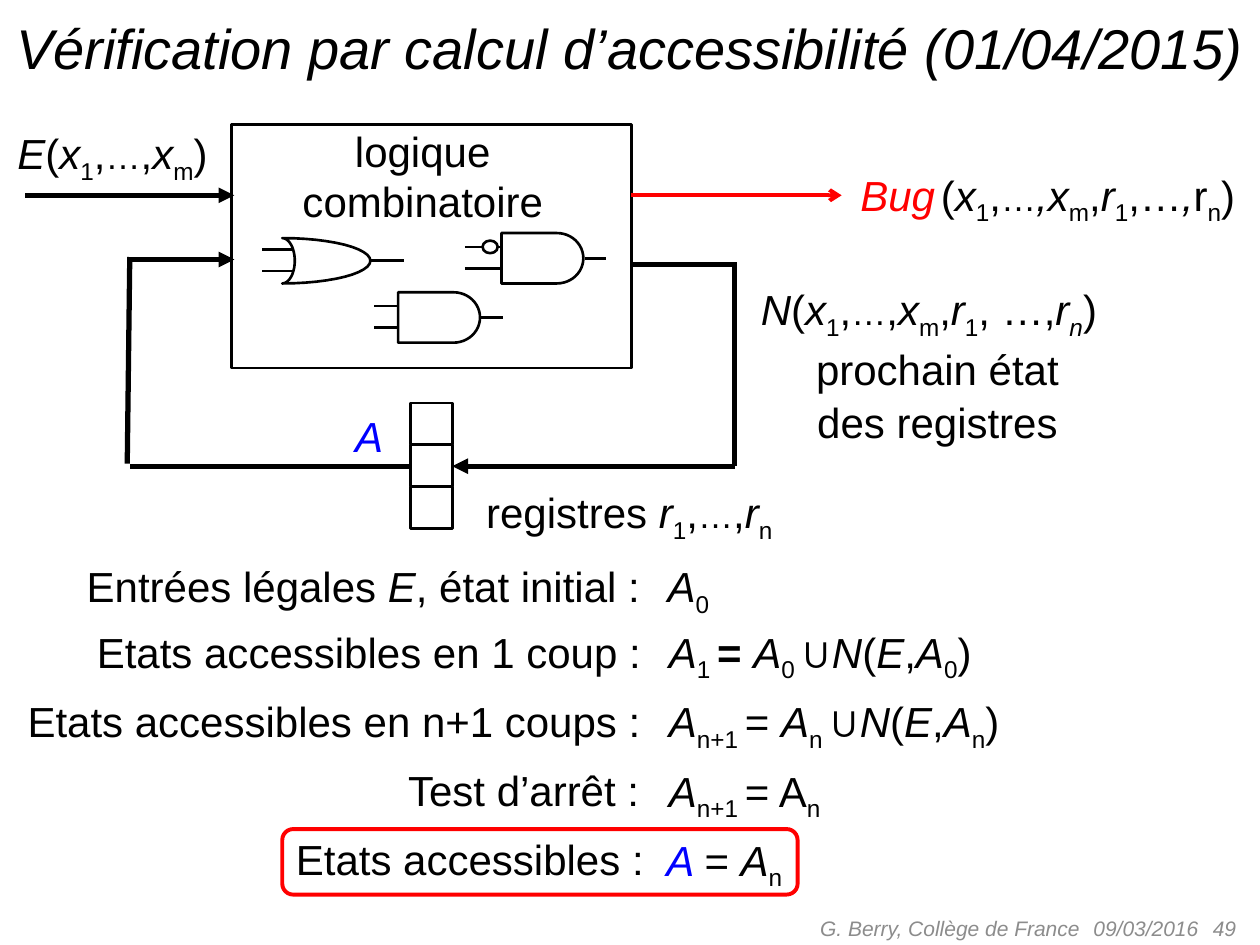
from math import cos, pi, sin

from lxml.etree import SubElement
from pptx import Presentation
from pptx.dml.color import RGBColor
from pptx.enum.shapes import MSO_CONNECTOR, MSO_SHAPE
from pptx.enum.text import MSO_ANCHOR, MSO_AUTO_SIZE, PP_ALIGN
from pptx.oxml.ns import qn
from pptx.util import Inches, Pt

BLACK = RGBColor(0, 0, 0)
WHITE = RGBColor(255, 255, 255)
RED = RGBColor(255, 0, 0)
BLUE = RGBColor(0, 0, 255)
GRAY = RGBColor(0x8C, 0x8C, 0x8C)

COLORS = {"r": RED, "t": RED, "u": BLUE, "g": GRAY}
SIZES = {"d": 20, "t": 12, "g": 12, "h": 32}
ITALIC = "ijrutgh"
LOWERED = "sj"

ROWS = [
    (0.59, 4.38, 4.64, "nEntrées légales |iE|n, état initial :", 5.2, 0.58, "iA|s0"),
    (0.67, 4.9, 4.65, "nEtats accessibles en 1 coup :", 5.21, 4.04,
     "iA|s1 |b= |iA|s0 |n∪|iN|n(|iE|n,|iA|s0|n)"),
    (0.12, 5.45, 5.21, "nEtats accessibles en n+1 coups :", 5.21, 3.09,
     "iA|sn+1 |n= |iA|sn |n∪|iN|n(|iE|n,|iA|sn|n)"),
    (3.14, 6.0, 2.18, "nTest d’arrêt :", 5.21, 1.55, "iA|sn+1 |n= A|sn"),
    (2.25, 6.55, 2.99, "nEtats accessibles :", 5.19, 1.18, "uA |n= |iA|sn"),
]


def style(run, key):
    font = run.font
    font.name = "Arial"
    font.size = Pt(SIZES.get(key, 24))
    font.color.rgb = COLORS.get(key, BLACK)
    font.italic = key in ITALIC
    font.bold = key == "b"
    if key in LOWERED:
        run._r.get_or_add_rPr().set("baseline", "-25000")


def write(frame, lines, align=PP_ALIGN.LEFT, space=1.05):
    frame.word_wrap = True
    frame.auto_size = MSO_AUTO_SIZE.NONE
    for i, line in enumerate(lines):
        para = frame.add_paragraph() if i else frame.paragraphs[0]
        para.alignment = align
        para.line_spacing = space
        for part in line.split("|"):
            run = para.add_run()
            run.text = part[1:]
            style(run, part[0])


def add_text(slide, x, y, w, h, *lines, **look):
    box = slide.shapes.add_textbox(Inches(x), Inches(y), Inches(w), Inches(h))
    write(box.text_frame, lines, **look)
    return box


def paint(shape, color=BLACK, width=1.5, fill=None):
    shape.shadow.inherit = False
    shape.line.color.rgb = color
    shape.line.width = Pt(width)
    if fill is None:
        shape.fill.background()
    else:
        shape.fill.solid()
        shape.fill.fore_color.rgb = fill


def add_box(slide, kind, x, y, w, h, **look):
    shape = slide.shapes.add_shape(kind, Inches(x), Inches(y), Inches(w), Inches(h))
    paint(shape, **look)


def add_line(slide, x1, y1, x2, y2, width=1.5, color=BLACK, tip=None):
    line = slide.shapes.add_connector(
        MSO_CONNECTOR.STRAIGHT, Inches(x1), Inches(y1), Inches(x2), Inches(y2))
    line.line.color.rgb = color
    line.line.width = Pt(width)
    if tip:
        SubElement(line.line._get_or_add_ln(), qn("a:tailEnd"), type=tip)
    SubElement(line._element.spPr, qn("a:effectLst"))


def bow(x, y, rx, ry, steps=24):
    turns = [pi * i / steps for i in range(steps + 1)]
    return [(x + rx * sin(t), y - ry * cos(t)) for t in turns]


def add_curve(slide, points, fill=None):
    spots = [(Inches(x), Inches(y)) for x, y in points]
    form = slide.shapes.build_freeform(*spots[0], scale=1)
    form.add_line_segments(spots[1:], close=True)
    paint(form.convert_to_shape(), fill=fill)


def add_and(slide, x, y, lead, negate=False):
    add_curve(slide, [(x, y)] + bow(x + 0.44, y + 0.2, 0.21, 0.2) + [(x, y + 0.4)], WHITE)
    for drop in (0.11, 0.28):
        add_line(slide, x - lead, y + drop, x, y + drop)
    if negate:
        add_box(slide, MSO_SHAPE.OVAL, x - 0.15, y + 0.06, 0.12, 0.1, fill=WHITE)
    add_line(slide, x + 0.66, y + 0.2, x + 0.83, y + 0.2)


def add_or(slide, x, y):
    front = bow(x, y, 0.7, 0.18)
    back = bow(x, y, 0.1, 0.18)
    add_curve(slide, front + back[::-1])
    for drop in (-0.09, 0.08):
        add_line(slide, x - 0.16, y + drop, x + 0.08, y + drop)
    add_line(slide, x + 0.7, y, x + 0.97, y)


def add_wires(slide):
    add_line(slide, 3.26, 3.7, 1.03, 3.7, 3)
    add_line(slide, 1.01, 3.68, 1.03, 2.04, 3)
    add_line(slide, 1.02, 2.06, 1.86, 2.06, 3, tip="triangle")
    add_line(slide, 5.83, 3.7, 3.59, 3.7, 3, tip="triangle")
    add_line(slide, 5.83, 3.7, 5.83, 2.08, 3)
    add_line(slide, 5.83, 2.1, 5.01, 2.1, 3)
    add_line(slide, 0.2, 1.55, 1.86, 1.55, 3, tip="triangle")
    add_line(slide, 5.01, 1.55, 6.68, 1.55, 2.25, RED, "arrow")


def add_labels(slide):
    logic = add_text(slide, 2.29, 0.94, 2.13, 0.91, "nlogique", "ncombinatoire",
                     align=PP_ALIGN.CENTER, space=1.0)
    logic.text_frame.vertical_anchor = MSO_ANCHOR.MIDDLE
    add_text(slide, 0.04, 0.94, 1.8, 0.52, "iE|n(|ix|s1|n,|d…|n,|ix|sm|n)")
    add_text(slide, 2.72, 3.19, 0.51, 0.52, "uA")
    add_text(slide, 3.76, 3.79, 2.59, 0.52, "nregistres |ir|s1|n,|d…|n,|ir|sn")
    add_text(slide, 6.73, 1.27, 3.36, 0.52,
             "rBug|t |n(|ix|s1|n,|d…|i,x|sm|n,|ir|s1|n,…|i,|nr|sn|n)")
    state = add_text(slide, 5.94, 2.18, 3, 1.37,
                     "iN|n(|ix|s1|n,|d…|n,|ix|sm|n,|ir|s1|n, …,|ir|jn|n)",
                     "nprochain état", "ndes registres")
    for para in state.text_frame.paragraphs[1:]:
        para.alignment = PP_ALIGN.CENTER


def add_rows(slide):
    for x, y, w, label, left, wide, term in ROWS:
        add_text(slide, x, y, w, 0.52, label)
        add_text(slide, left, y, wide, 0.52, term)
    add_box(slide, MSO_SHAPE.ROUNDED_RECTANGLE, 2.24, 6.58, 4.09, 0.52,
            color=RED, width=2.25)


def add_foot(slide):
    for x, w, text, align in (
        (8.58, 1.3, "g09/03/2016", PP_ALIGN.LEFT),
        (7.58, 2.33, "g49", PP_ALIGN.RIGHT),
        (5.08, 3.59, "gG. Berry, Collège de France", PP_ALIGN.RIGHT),
    ):
        box = add_text(slide, x, 7.17, w, 0.4, text, align=align, space=1.0)
        box.text_frame.vertical_anchor = MSO_ANCHOR.MIDDLE


def add_title(slide):
    title = slide.shapes.title
    title.left, title.top = Inches(0), Inches(0.05)
    title.width, title.height = Inches(10), Inches(0.64)
    write(title.text_frame, ["hVérification par calcul d’accessibilité (01/04/2015)"],
          PP_ALIGN.CENTER, 1.0)


def main():
    deck = Presentation()
    deck.slide_width, deck.slide_height = Inches(10), Inches(7.5)
    slide = deck.slides.add_slide(deck.slide_layouts[5])
    add_title(slide)
    add_box(slide, MSO_SHAPE.RECTANGLE, 1.84, 0.99, 3.17, 1.93)
    add_wires(slide)
    for i in range(3):
        add_box(slide, MSO_SHAPE.RECTANGLE, 3.26, 3.2 + i / 3, 0.33, 0.33, fill=WHITE)
    add_or(slide, 2.24, 2.07)
    add_and(slide, 3.98, 1.85, 0.29, negate=True)
    add_and(slide, 3.16, 2.32, 0.19)
    add_labels(slide)
    add_rows(slide)
    add_foot(slide)
    deck.save("out.pptx")


if __name__ == "__main__":
    main()
